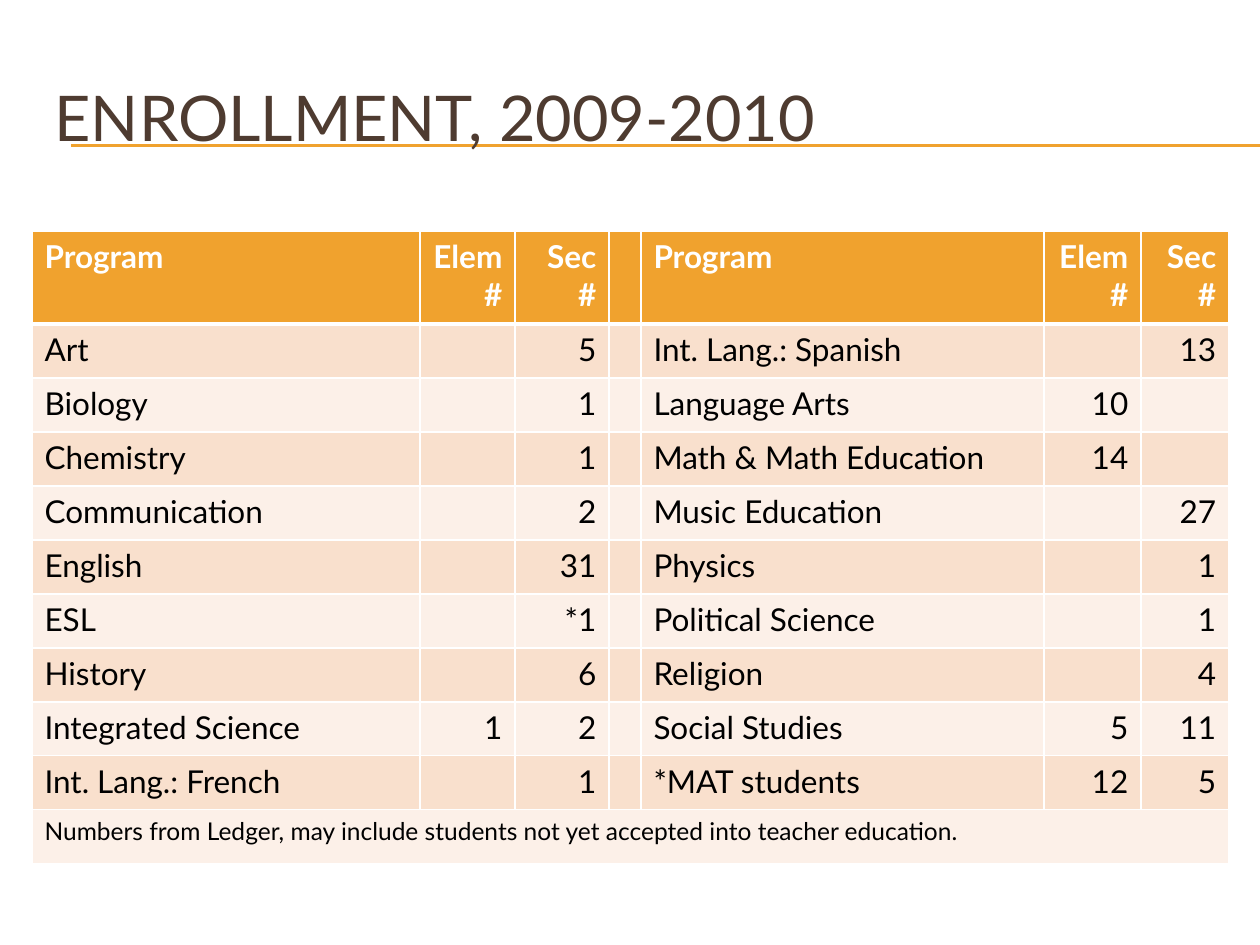
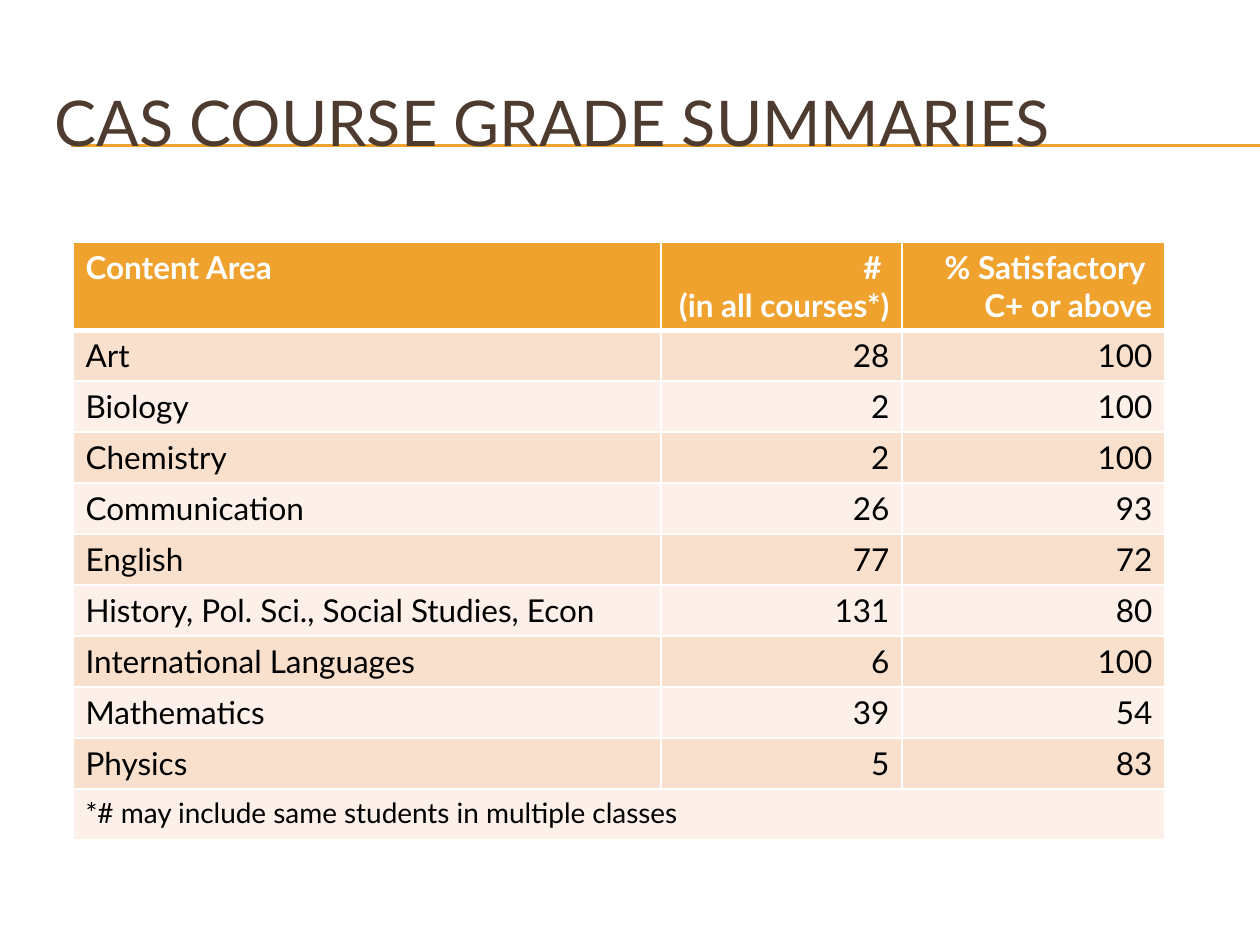
import dataclasses

import pptx
import pptx.dml.color
import pptx.enum.shapes
import pptx.enum.text
import pptx.oxml
import pptx.oxml.ns
import pptx.presentation
import pptx.shapes.autoshape
import pptx.slide
import pptx.table
import pptx.util

EMU_PER_PX = 914400 / 126
TITLE_ONLY_LAYOUT = 5


@dataclasses.dataclass(frozen=True)
class Theme:
    font: str = "Lato"
    accent: str = "F0A22E"
    title: str = "4E3B30"
    white: str = "FFFFFF"
    text: str = "000000"
    bands: tuple[str, str] = ("FCF0E8", "F9E0CD")
    title_size: int = 36
    table_size: int = 18
    rule_width: float = 0.75
    border_width: int = 1
    header_border_width: int = 3


@dataclasses.dataclass(frozen=True)
class Box:
    left: int
    top: int
    width: int
    height: int


@dataclasses.dataclass(frozen=True)
class TableSlide:
    title: str
    title_box: Box
    left: int
    top: int
    columns: tuple[int, ...]
    text_columns: tuple[int, ...]
    header_height: int
    row_height: int
    rows: tuple[tuple[str, ...], ...]
    footnote: str
    footnote_size: int


THEME = Theme()
SLIDE_SIZE = (1260, 945)
RULE_LEFT = 71
RULE_TOPS = (145, 146)

ENROLLMENT = TableSlide(
    title="ENROLLMENT, 2009-2010",
    title_box=Box(42, 53, 1197, 126),
    left=32,
    top=231,
    columns=(388, 95, 94, 32, 403, 97, 88),
    text_columns=(0, 4),
    header_height=93,
    row_height=54,
    rows=(
        ("Program", "Elem #", "Sec\n#", "", "Program", "Elem #", "Sec\n#"),
        ("Art", "", "5", "", "Int. Lang.: Spanish", "", "13"),
        ("Biology", "", "1", "", "Language Arts", "10", ""),
        ("Chemistry", "", "1", "", "Math & Math Education", "14", ""),
        ("Communication", "", "2", "", "Music Education", "", "27"),
        ("English", "", "31", "", "Physics", "", "1"),
        ("ESL", "", "*1", "", "Political Science", "", "1"),
        ("History", "", "6", "", "Religion", "", "4"),
        ("Integrated Science", "1", "2", "", "Social Studies", "5", "11"),
        ("Int. Lang.: French", "", "1", "", "*MAT students", "12", "5"),
    ),
    footnote="Numbers from Ledger, may include students not yet accepted into teacher education.",
    footnote_size=14,
)

GRADES = TableSlide(
    title="CAS COURSE GRADE SUMMARIES",
    title_box=Box(42, 63, 1197, 116),
    left=73,
    top=242,
    columns=(588, 241, 263),
    text_columns=(0,),
    header_height=88,
    row_height=51,
    rows=(
        ("Content Area", "# \n(in all courses*)", "% Satisfactory \nC+ or above"),
        ("Art", "28", "100"),
        ("Biology", "2", "100"),
        ("Chemistry", "2", "100"),
        ("Communication", "26", "93"),
        ("English", "77", "72"),
        ("History, Pol. Sci., Social Studies, Econ", "131", "80"),
        ("International Languages", "6", "100"),
        ("Mathematics", "39", "54"),
        ("Physics", "5", "83"),
    ),
    footnote="*# may include same students in multiple classes",
    footnote_size=16,
)


def px(length: int) -> pptx.util.Emu:
    return pptx.util.Emu(round(length * EMU_PER_PX))


def rgb(color: str) -> pptx.dml.color.RGBColor:
    return pptx.dml.color.RGBColor.from_string(color)


def format_text(text_frame, size: int, color: str, bold: bool, right: bool) -> None:
    align = pptx.enum.text.PP_ALIGN
    for paragraph in text_frame.paragraphs:
        paragraph.alignment = align.RIGHT if right else align.LEFT
        for run in paragraph.runs:
            run.font.name = THEME.font
            run.font.size = pptx.util.Pt(size)
            run.font.bold = bold
            run.font.color.rgb = rgb(color)


def set_title(title: pptx.shapes.autoshape.Shape, text: str, box: Box) -> None:
    title.left, title.top = px(box.left), px(box.top)
    title.width, title.height = px(box.width), px(box.height)
    text_frame = title.text_frame
    text_frame.text = text
    text_frame.word_wrap = True
    text_frame.auto_size = pptx.enum.text.MSO_AUTO_SIZE.NONE
    text_frame.vertical_anchor = pptx.enum.text.MSO_ANCHOR.MIDDLE
    format_text(text_frame, THEME.title_size, THEME.title, False, False)


def add_rules(slide: pptx.slide.Slide) -> None:
    for top in RULE_TOPS:
        rule = slide.shapes.add_connector(
            pptx.enum.shapes.MSO_CONNECTOR.STRAIGHT,
            px(RULE_LEFT), px(top), px(SLIDE_SIZE[0]), px(top),
        )
        rule.line.color.rgb = rgb(THEME.accent)
        rule.line.width = pptx.util.Pt(THEME.rule_width)
        properties = rule.element.find(pptx.oxml.ns.qn("p:spPr"))
        properties.append(pptx.oxml.parse_xml(
            f'<a:effectLst {pptx.oxml.ns.nsdecls("a")}/>'))
        slide.shapes.title.element.addprevious(rule.element)


def set_borders(cell_element, row: int) -> None:
    thick = THEME.header_border_width
    widths = dict.fromkeys(("lnL", "lnR", "lnT", "lnB"), THEME.border_width)
    if row == 0:
        widths["lnB"] = thick
    elif row == 1:
        widths["lnT"] = thick
    properties = cell_element.find(pptx.oxml.ns.qn("a:tcPr"))
    for position, (side, width) in enumerate(widths.items()):
        properties.insert(position, pptx.oxml.parse_xml(
            f'<a:{side} {pptx.oxml.ns.nsdecls("a")} w="{pptx.util.Pt(width)}">'
            f'<a:solidFill><a:srgbClr val="{THEME.white}"/></a:solidFill></a:{side}>'))


def fill_cell(cell: pptx.table._Cell, text: str, size: int, row: int, right: bool) -> None:
    header = row == 0
    cell.fill.solid()
    cell.fill.fore_color.rgb = rgb(THEME.accent if header else THEME.bands[row % 2])
    cell.text_frame.text = text
    format_text(cell.text_frame, size, THEME.white if header else THEME.text, header, right)


def add_data_table(slide: pptx.slide.Slide, content: TableSlide) -> None:
    column_count = len(content.columns)
    footnote_row = len(content.rows)
    height = content.header_height + footnote_row * content.row_height
    frame = slide.shapes.add_table(
        footnote_row + 1, column_count, px(content.left), px(content.top),
        px(sum(content.columns)), px(height),
    )
    table = frame.table
    table.horz_banding = False
    for column, width in zip(table.columns, content.columns):
        column.width = px(width)
    for index, table_row in enumerate(table.rows):
        table_row.height = px(content.row_height if index else content.header_height)

    footnote = (content.footnote,) + ("",) * (column_count - 1)
    for row, texts in enumerate(content.rows + (footnote,)):
        is_footnote = row == footnote_row
        size = content.footnote_size if is_footnote else THEME.table_size
        for column, text in enumerate(texts):
            right = not is_footnote and column not in content.text_columns
            fill_cell(table.cell(row, column), text, size, row, right)
    table.cell(footnote_row, 0).merge(table.cell(footnote_row, column_count - 1))

    for index, cell_element in enumerate(frame.element.iter(pptx.oxml.ns.qn("a:tc"))):
        set_borders(cell_element, index // column_count)


def add_table_slide(presentation: pptx.presentation.Presentation, content: TableSlide) -> None:
    slide = presentation.slides.add_slide(presentation.slide_layouts[TITLE_ONLY_LAYOUT])
    set_title(slide.shapes.title, content.title, content.title_box)
    add_rules(slide)
    add_data_table(slide, content)


def main() -> None:
    presentation = pptx.Presentation()
    presentation.slide_width, presentation.slide_height = map(px, SLIDE_SIZE)
    for content in (ENROLLMENT, GRADES):
        add_table_slide(presentation, content)
    presentation.save("out.pptx")


if __name__ == "__main__":
    main()
